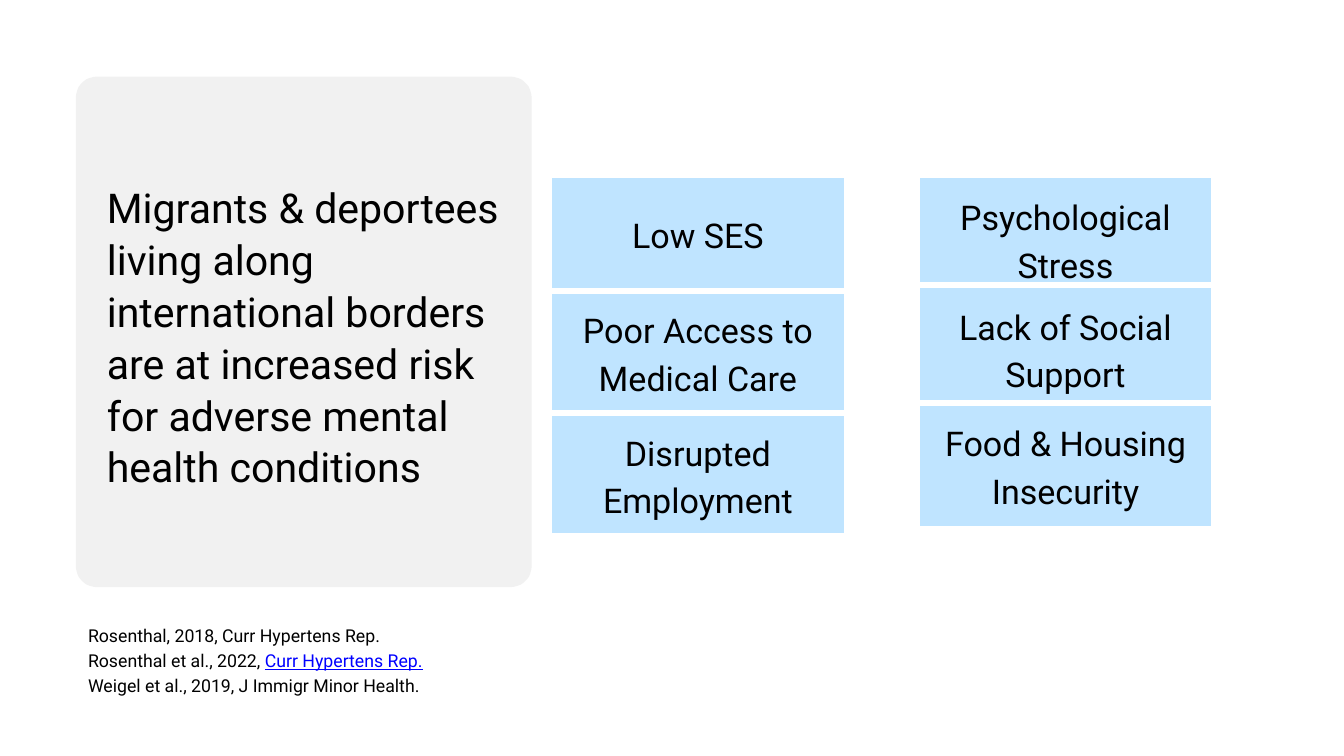
from lxml import etree
from pptx import Presentation
from pptx.dml.color import RGBColor
from pptx.enum.shapes import MSO_SHAPE
from pptx.enum.text import MSO_ANCHOR, PP_ALIGN
from pptx.oxml.ns import qn
from pptx.util import Inches, Pt

ROUNDED = MSO_SHAPE.ROUNDED_RECTANGLE
MIDDLE = MSO_ANCHOR.MIDDLE
CENTER = PP_ALIGN.CENTER

BLACK = RGBColor(0x00, 0x00, 0x00)
WHITE = RGBColor(0xFF, 0xFF, 0xFF)
GREY = RGBColor(0xF1, 0xF1, 0xF1)
SKY = RGBColor(0xBF, 0xE4, 0xFF)
LINK_BLUE = RGBColor(0x00, 0x00, 0xFF)

FONT = "Roboto"
SLIDE_W, SLIDE_H = Inches(20), Inches(11.25)
MARGIN = 6.55
FACTOR_W = 22.15


def cols(n):
    return round(SLIDE_W * n / 100)


def rows(n):
    return round(SLIDE_H * n / 100)


def grid_box(x, y, w, h):
    return cols(x), rows(y), cols(w), rows(h)


def format_paragraph(p, size, spacing):
    p.line_spacing = Pt(spacing)
    for r in p.runs:
        r.font.name = FONT
        r.font.size = Pt(size)
        r.font.color.rgb = BLACK


def set_margins(target, margin):
    target.margin_left = target.margin_right = margin
    target.margin_top = target.margin_bottom = margin


def add_text_box(slide, box, margin):
    tf = slide.shapes.add_textbox(*box).text_frame
    tf.word_wrap = True
    set_margins(tf, margin)
    return tf


def set_borders(cell, open_bottom):
    tc_pr = cell._tc.get_or_add_tcPr()
    for i, side in enumerate(("lnL", "lnR", "lnT", "lnB")):
        ln = etree.Element(qn(f"a:{side}"))
        if side == "lnB" and open_bottom:
            ln.set("w", "0")
            etree.SubElement(ln, qn("a:noFill"))
        else:
            ln.set("w", str(Pt(7.5)))
            fill = etree.SubElement(ln, qn("a:solidFill"))
            etree.SubElement(fill, qn("a:srgbClr"), val=str(WHITE))
        tc_pr.insert(i, ln)


def add_statement(slide, box, text):
    x, y, w, h = box
    sp = slide.shapes.add_shape(ROUNDED, x, y, w, h)
    sp.adjustments[0] = 0.02
    sp.shadow.inherit = False
    sp.fill.solid()
    sp.fill.fore_color.rgb = GREY
    sp.line.color.rgb = GREY
    sp.line.width = Pt(26.25)
    tf = add_text_box(slide, (x, y + rows(0.5), w, h), Inches(0.28))
    tf.vertical_anchor = MIDDLE
    tf.text = text
    format_paragraph(tf.paragraphs[0], 44, 55.5)


def add_factors(slide, x, y, factors, open_bottom=False):
    height = sum(h for _, h in factors)
    table = slide.shapes.add_table(
        len(factors), 1, *grid_box(x, y, FACTOR_W, height)).table
    table.first_row = table.horz_banding = False
    for i, (text, h) in enumerate(factors):
        table.rows[i].height = rows(h)
        cell = table.cell(i, 0)
        cell.text = text
        cell.vertical_anchor = MIDDLE
        set_margins(cell, Inches(0.1))
        cell.fill.solid()
        cell.fill.fore_color.rgb = SKY
        set_borders(cell, open_bottom)
        p = cell.text_frame.paragraphs[0]
        p.alignment = CENTER
        format_paragraph(p, 36.5, 51.1)


def add_references(slide, box, references):
    tf = add_text_box(slide, box, 0)
    for i, (text, linked) in enumerate(references):
        p = tf.add_paragraph() if i else tf.paragraphs[0]
        p.text = text
        if linked:
            p.add_run().text = linked
        format_paragraph(p, 19, 26.6)
        if linked:
            font = p.runs[-1].font
            font.color.rgb = LINK_BLUE
            font.underline = True


def main():
    prs = Presentation()
    prs.slide_width, prs.slide_height = SLIDE_W, SLIDE_H
    slide = prs.slides.add_slide(prs.slide_layouts[6])

    add_factors(slide, 40.85, 23.2, [
        ("Low SES", 15.29),
        ("Poor Access to Medical Care", 16.18),
        ("Disrupted Employment", 16.18),
    ])
    add_statement(
        slide, grid_box(MARGIN, 11.75, 32.1, 64.3),
        "Migrants & deportees living along international borders "
        "are at increased risk for adverse mental health conditions")
    for text, y, h, open_bottom in (
        ("Psychological Stress", 23.2, 16.8, False),
        ("Lack of Social Support", 37.69, 16.8, False),
        ("Food & Housing Insecurity", 53.33, 16.27, True),
    ):
        add_factors(slide, 68.2, y, [(text, h)], open_bottom)
    add_references(slide, grid_box(MARGIN, 82.2, 86.9, 9.6), [
        ("Rosenthal, 2018, Curr Hypertens Rep.", ""),
        ("Rosenthal et al., 2022, ", "Curr Hypertens Rep."),
        ("Weigel et al., 2019, J Immigr Minor Health.", ""),
    ])
    prs.save("out.pptx")


if __name__ == "__main__":
    main()
